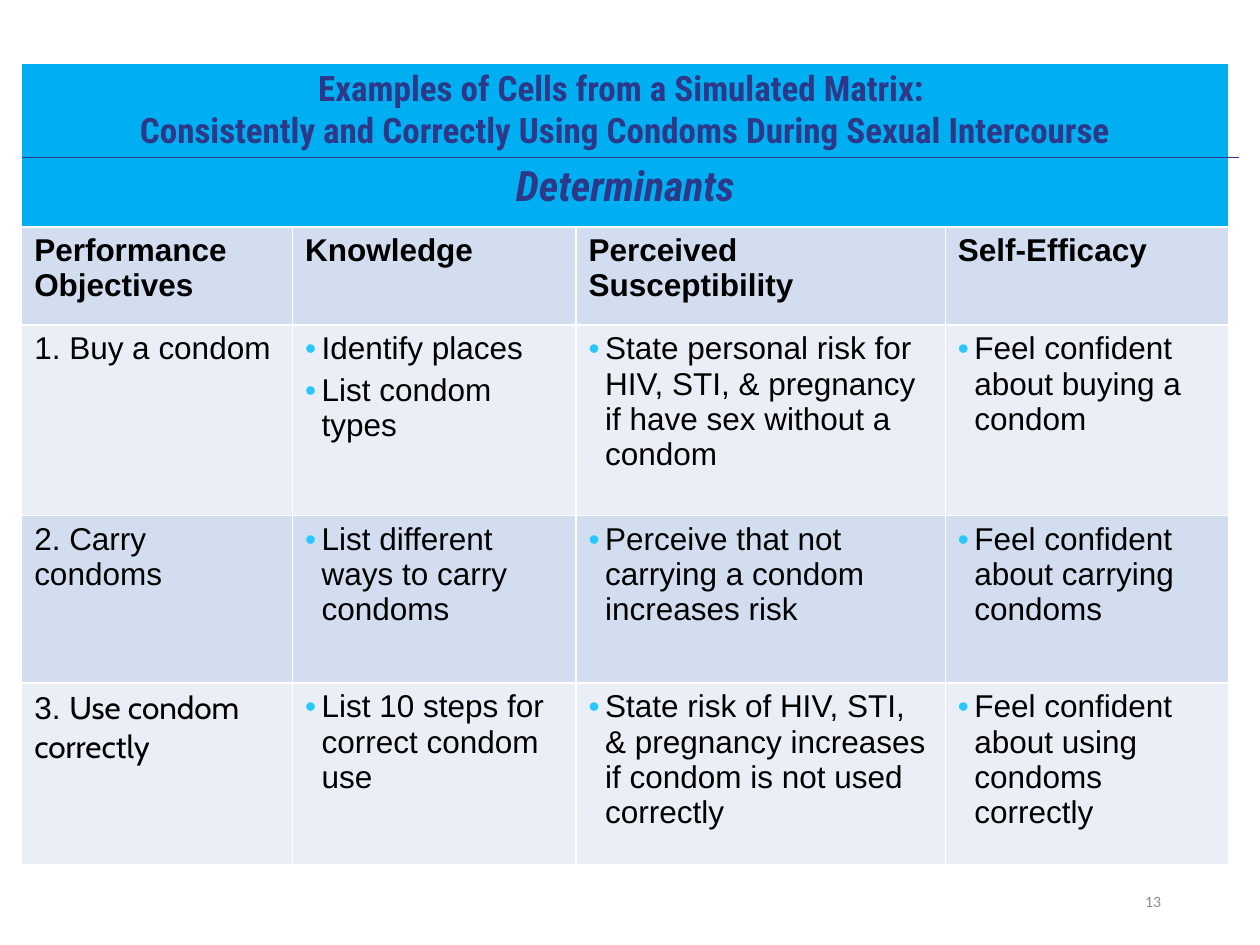
import pptx
import pptx.dml.color
import pptx.enum.shapes
import pptx.enum.text
import pptx.oxml
import pptx.oxml.ns
import pptx.util
from dataclasses import dataclass

Pt = pptx.util.Pt
ALIGN = pptx.enum.text.PP_ALIGN
NAMESPACE = pptx.oxml.ns.nsdecls("a")


@dataclass(frozen=True)
class Theme:
    navy: str = "2D3988"
    banner: str = "00AFF1"
    bands: tuple = ("D2DEEF", "EAEFF7")
    bullet: str = "29C7FF"
    border: str = "FFFFFF"
    ink: str = "000000"
    grey: str = "8C8C8C"
    title_size: int = 20
    subtitle_size: int = 24
    body_size: int = 18
    number_size: int = 9
    title_font: str = "Roboto Condensed"
    body_font: str = "Arial"
    accent_font: str = "Cabin"
    number_font: str = "Calibri"


theme = Theme()


def style(span, font, size, color, bold=False, italic=False):
    span.font.name = font
    span.font.size = Pt(size)
    span.font.color.rgb = pptx.dml.color.RGBColor.from_string(color)
    span.font.bold = bold
    span.font.italic = italic


def paint(cell, color):
    """Fill a cell and draw thin borders on its four sides."""
    cell.fill.solid()
    cell.fill.fore_color.rgb = pptx.dml.color.RGBColor.from_string(color)
    properties = cell._tc.get_or_add_tcPr()
    for position, side in enumerate(("lnL", "lnR", "lnT", "lnB")):
        properties.insert(position, pptx.oxml.parse_xml(
            f'<a:{side} {NAMESPACE} w="{Pt(1)}"><a:solidFill>'
            f'<a:srgbClr val="{theme.border}"/></a:solidFill></a:{side}>'))


deck = pptx.Presentation()
deck.slide_width, deck.slide_height = Pt(720), Pt(540)
slide = deck.slides.add_slide(deck.slide_layouts[6])

# Matrix of objectives against determinants
headings = ["Performance Objectives", "Knowledge", "Perceived Susceptibility", "Self-Efficacy"]
objectives = [
    ["1. Buy a condom", "Identify places\nList condom types",
     "State personal risk for HIV, STI, & pregnancy if have sex without a condom",
     "Feel confident about buying a condom"],
    ["2. Carry condoms", "List different ways to carry condoms",
     "Perceive that not carrying a condom increases risk",
     "Feel confident about carrying condoms"],
    ["3. Use condom correctly", "List 10 steps for correct condom use",
     "State risk of HIV, STI, & pregnancy increases if condom is not used correctly",
     "Feel confident about using condoms correctly"],
]
column_widths = [154.8, 162, 211, 162]
row_heights = [93.6, 56.2, 108.7, 95.8, 103.7]
table = slide.shapes.add_table(
    len(row_heights), len(column_widths), Pt(12.4), Pt(36),
    Pt(sum(column_widths)), Pt(sum(row_heights))).table
for column, width in zip(table.columns, column_widths):
    column.width = Pt(width)
for row, height in zip(table.rows, row_heights):
    row.height = Pt(height)

banner = table.cell(0, 0)
banner.merge(table.cell(0, len(column_widths) - 1))
for cell in table.rows[0].cells:
    paint(cell, theme.banner)
banner.text_frame.text = (
    "Examples of Cells from a Simulated Matrix: \n"
    "Consistently and Correctly Using Condoms During Sexual Intercourse\n"
    "Determinants")
for para in banner.text_frame.paragraphs:
    para.alignment = ALIGN.CENTER
    style(para.runs[0], theme.title_font, theme.title_size, theme.navy, bold=True)
para.space_before = Pt(6)
style(para.runs[0], theme.title_font, theme.subtitle_size, theme.navy, bold=True, italic=True)

for row_index, texts in enumerate([headings] + objectives, start=1):
    for column_index, text in enumerate(texts):
        cell = table.cell(row_index, column_index)
        paint(cell, theme.bands[(row_index - 1) % 2])
        cell.text_frame.text = text
        for para in cell.text_frame.paragraphs:
            para.space_before = Pt(3.6)
            style(para.runs[0], theme.body_font, theme.body_size, theme.ink, bold=row_index == 1)
            if row_index > 1 and column_index > 0:
                properties = para._p.get_or_add_pPr()
                properties.set("marL", str(Pt(9.4)))
                properties.set("indent", str(-Pt(9.4)))
                for bullet in (f'<a:buClr {NAMESPACE}><a:srgbClr val="{theme.bullet}"/></a:buClr>',
                               f'<a:buFont {NAMESPACE} typeface="{theme.body_font}"/>',
                               f'<a:buChar {NAMESPACE} char="•"/>'):
                    properties.append(pptx.oxml.parse_xml(bullet))

# The last objective continues in the accent font after its number
para = table.cell(len(row_heights) - 1, 0).text_frame.paragraphs[0]
number = para.runs[0]
number.text = "3. "
wording = para.add_run()
wording.text = "Use condom correctly"
style(wording, theme.accent_font, theme.body_size, theme.ink)

# Rule under the title
rule = slide.shapes.add_connector(
    pptx.enum.shapes.MSO_CONNECTOR.STRAIGHT, Pt(12.4), Pt(90), Pt(708), Pt(90))
rule.line.color.rgb = pptx.dml.color.RGBColor.from_string(theme.navy)
rule.line.width = Pt(1)
rule._element.spPr.append(pptx.oxml.parse_xml(f"<a:effectLst {NAMESPACE}/>"))

# Slide number
box = slide.shapes.add_textbox(Pt(508.5), Pt(500.5), Pt(162), Pt(28.8))
box.text_frame.word_wrap = True
box.text_frame.vertical_anchor = pptx.enum.text.MSO_ANCHOR.MIDDLE
box.text_frame.text = "13"
para = box.text_frame.paragraphs[0]
para.alignment = ALIGN.RIGHT
style(para.runs[0], theme.number_font, theme.number_size, theme.grey)

deck.save("out.pptx")
